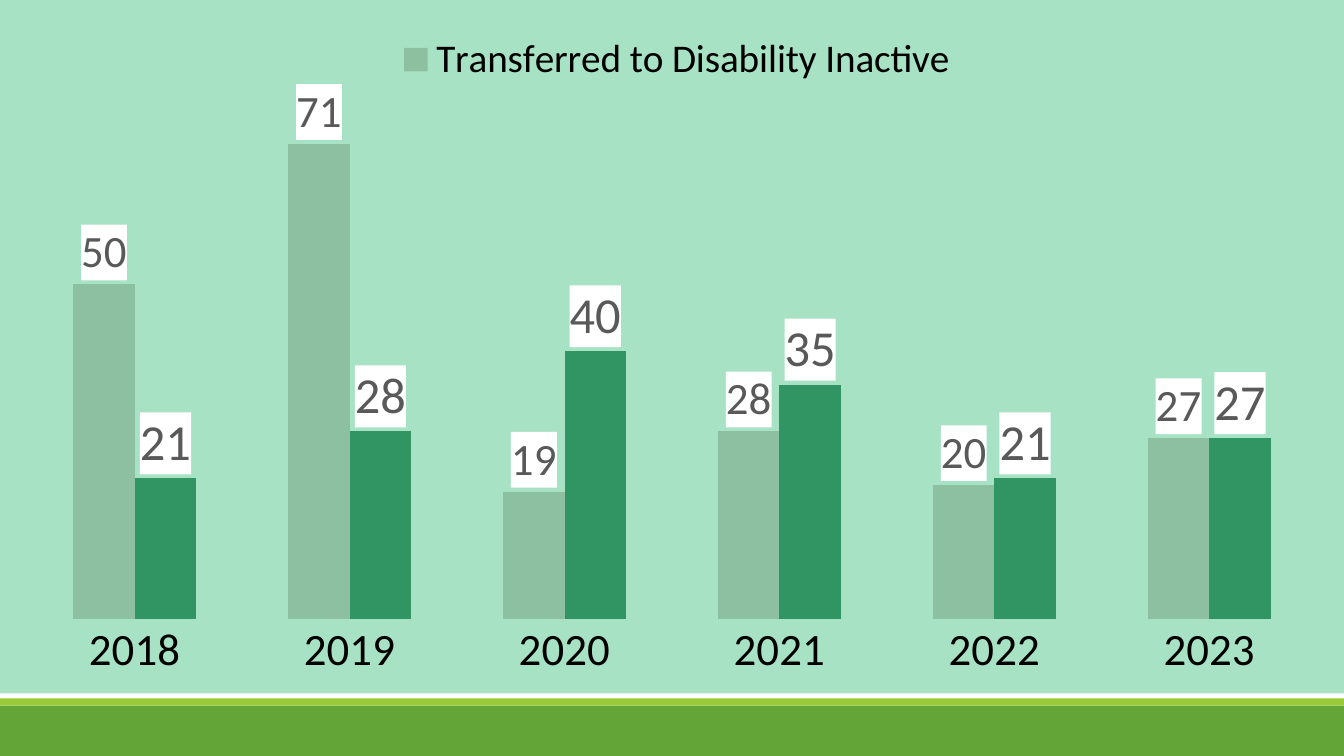
from dataclasses import dataclass

from lxml.etree import _Element
from pptx import Presentation
from pptx.chart.chart import Chart
from pptx.chart.data import CategoryChartData
from pptx.dml.color import RGBColor
from pptx.enum.chart import XL_CHART_TYPE, XL_LABEL_POSITION, XL_LEGEND_POSITION, XL_TICK_MARK
from pptx.enum.shapes import MSO_SHAPE
from pptx.oxml import parse_xml
from pptx.oxml.ns import nsdecls, qn
from pptx.slide import Slide
from pptx.text.text import Font
from pptx.util import Inches, Pt

MINT = RGBColor(0xA8, 0xE2, 0xC5)
SAGE = RGBColor(0x8C, 0xC0, 0xA0)
EMERALD = RGBColor(0x31, 0x94, 0x63)
GRASS = RGBColor(0x63, 0xA5, 0x37)
LIME = RGBColor(0x99, 0xCB, 0x38)
GREY = RGBColor(0x59, 0x59, 0x59)
BLACK = RGBColor(0, 0, 0)
WHITE = RGBColor(0xFF, 0xFF, 0xFF)

SLIDE_WIDTH = 13.33
CHART_HEIGHT = 6.88


@dataclass(frozen=True)
class Band:
    top: float
    height: float
    color: RGBColor


@dataclass(frozen=True)
class TransferSeries:
    values: tuple[int, ...]
    color: RGBColor
    label_size: int
    name: str = ""


YEARS = ("2018", "2019", "2020", "2021", "2022", "2023")
BANDS = (Band(7, 0.5, GRASS), Band(6.93, 0.07, LIME))
TRANSFERS = (
    TransferSeries((50, 71, 19, 28, 20, 27), SAGE, 32, "Transferred to Disability Inactive"),
    TransferSeries((21, 28, 40, 35, 21, 27), EMERALD, 36),
)


def format_font(font: Font, size: float, color: RGBColor = BLACK) -> None:
    font.name = "Calibri"
    font.size = Pt(size)
    font.bold = False
    font.color.rgb = color


def chart_fill(color: RGBColor) -> _Element:
    """Return chart shape properties with a solid fill and no outline."""
    return parse_xml(
        f'<c:spPr {nsdecls("c", "a")}><a:solidFill><a:srgbClr val="{color}"/></a:solidFill>'
        "<a:ln><a:noFill/></a:ln></c:spPr>"
    )


def manual_layout(target: str = "", **inches: float) -> _Element:
    """Return a fixed layout for x, y and, if given, w and h in inches."""
    places = "".join(
        f'<c:{key} val="{length / (SLIDE_WIDTH if key in "xw" else CHART_HEIGHT):.4f}"/>'
        for key, length in inches.items()
    )
    return parse_xml(
        f'<c:layout {nsdecls("c")}><c:manualLayout>{target}'
        f'<c:xMode val="edge"/><c:yMode val="edge"/>{places}</c:manualLayout></c:layout>'
    )


def draw_band(slide: Slide, band: Band) -> None:
    shape = slide.shapes.add_shape(
        MSO_SHAPE.RECTANGLE, 0, Inches(band.top), Inches(SLIDE_WIDTH), Inches(band.height)
    )
    shape.shadow.inherit = False
    shape.fill.solid()
    shape.fill.fore_color.rgb = band.color
    shape.line.fill.background()


def add_transfer_chart(slide: Slide) -> Chart:
    data = CategoryChartData()
    data.categories = YEARS
    for transfer in TRANSFERS:
        data.add_series(transfer.name, transfer.values)
    chart = slide.shapes.add_chart(
        XL_CHART_TYPE.COLUMN_CLUSTERED,
        0, 0, Inches(SLIDE_WIDTH), Inches(CHART_HEIGHT), data,
    ).chart
    chart.has_title = False
    format_font(chart.font, 10)
    return chart


def format_series(chart: Chart) -> None:
    plot = chart.plots[0]
    plot.gap_width = 150
    plot.overlap = 0
    plot.vary_by_categories = False
    for series, transfer in zip(plot.series, TRANSFERS):
        series.format.fill.solid()
        series.format.fill.fore_color.rgb = transfer.color
        labels = series.data_labels
        labels.show_value = True
        labels.position = XL_LABEL_POSITION.OUTSIDE_END
        format_font(labels.font, transfer.label_size, GREY)
        text_properties = series._element.find(qn("c:dLbls")).find(qn("c:txPr"))
        text_properties.addprevious(chart_fill(WHITE))


def format_axes(chart: Chart) -> None:
    years = chart.category_axis
    years.major_tick_mark = XL_TICK_MARK.NONE
    years.format.line.fill.background()
    format_font(years.tick_labels.font, 32)
    counts = chart.value_axis
    counts.visible = False
    counts.has_major_gridlines = False
    counts.minimum_scale = 0
    counts.maximum_scale = 80


def format_legend(chart: Chart) -> None:
    """Put the legend on top, with an entry for the named series only."""
    chart.has_legend = True
    legend = chart.legend
    legend.position = XL_LEGEND_POSITION.TOP
    legend.include_in_layout = False
    format_font(legend.font, 28)
    for layout in legend._element.findall(qn("c:layout")):
        legend._element.remove(layout)
    entry = parse_xml(
        f'<c:legendEntry {nsdecls("c")}><c:idx val="1"/><c:delete val="1"/></c:legendEntry>'
    )
    legend._element.find(qn("c:legendPos")).addnext(entry)
    entry.addnext(manual_layout(x=3.88, y=0.28))


def format_areas(chart: Chart) -> None:
    chart_element = chart._chartSpace.find(qn("c:chart"))
    chart_element.addnext(chart_fill(MINT))
    plot_area = chart_element.find(qn("c:plotArea"))
    for layout in plot_area.findall(qn("c:layout")):
        plot_area.remove(layout)
    inner = '<c:layoutTarget val="inner"/>'
    plot_area.insert(0, manual_layout(inner, x=0.27, y=0.83, w=12.79, h=5.31))
    plot_area.append(chart_fill(MINT))


def main() -> None:
    presentation = Presentation()
    presentation.slide_width = Inches(SLIDE_WIDTH)
    presentation.slide_height = Inches(7.5)
    slide = presentation.slides.add_slide(presentation.slide_layouts[6])
    for band in BANDS:
        draw_band(slide, band)
    chart = add_transfer_chart(slide)
    format_series(chart)
    format_axes(chart)
    format_legend(chart)
    format_areas(chart)
    presentation.save("out.pptx")


if __name__ == "__main__":
    main()
